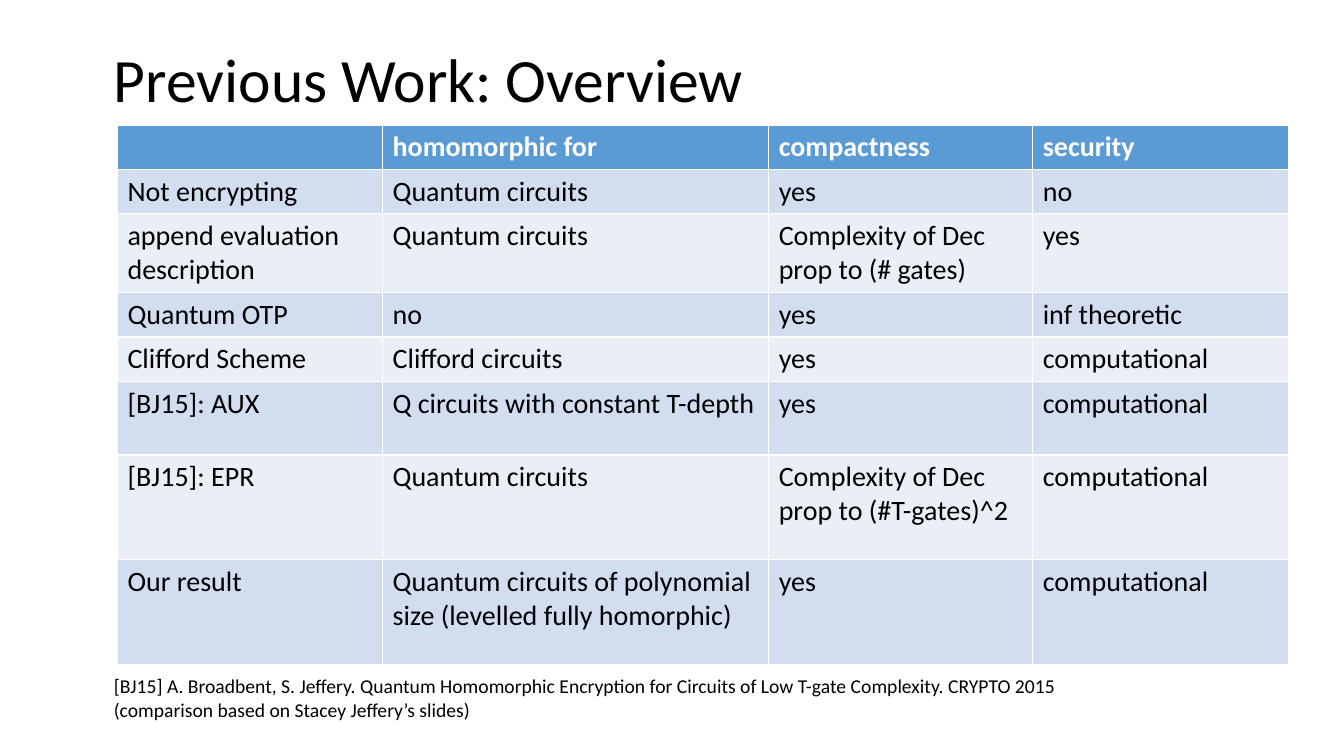
from dataclasses import dataclass

from pptx import Presentation
from pptx.dml.color import RGBColor
from pptx.enum.text import MSO_ANCHOR, MSO_AUTO_SIZE, PP_ALIGN
from pptx.util import Pt


@dataclass(frozen=True)
class Theme:
    """Colours, typeface and type sizes of the slide."""

    font: str = "Calibri"
    ink: str = "000000"
    paper: str = "FFFFFF"
    header: str = "5B9BD5"
    bands: tuple = ("D2DEEF", "EAEFF7")
    title_size: float = 44
    table_size: float = 20
    source_size: float = 14


THEME = Theme()
TITLE = "Previous Work: Overview"
COLUMN_WIDTHS = (189.4, 275.8, 188.6, 182.9)
ROW_HEIGHTS = (31.7, 31.7, 55.4, 31.7, 31.7, 52.6, 74.9, 74.9)
SCHEMES = (
    ("", "homomorphic for", "compactness", "security"),
    ("Not encrypting", "Quantum circuits", "yes", "no"),
    ("append evaluation description", "Quantum circuits",
     "Complexity of Dec \vprop to (# gates)", "yes"),
    ("Quantum OTP", "no", "yes", "inf theoretic"),
    ("Clifford Scheme", "Clifford circuits", "yes", "computational"),
    ("[BJ15]: AUX", "Q circuits with constant T-depth", "yes", "computational"),
    ("[BJ15]: EPR", "Quantum circuits",
     "Complexity of Dec prop to (#T-gates)^2", "computational"),
    ("Our result", "Quantum circuits of polynomial size (levelled fully homorphic)",
     "yes", "computational"),
)
SOURCES = (
    "[BJ15] A. Broadbent, S. Jeffery. Quantum Homomorphic Encryption for "
    "Circuits of Low T-gate Complexity. CRYPTO 2015\n"
    "(comparison based on Stacey Jeffery’s slides)"
)


def format_text(text_frame, size, color, bold=False):
    """Apply the theme typeface with a size, colour and weight to all runs."""
    for paragraph in text_frame.paragraphs:
        for run in paragraph.runs:
            run.font.name = THEME.font
            run.font.size = Pt(size)
            run.font.bold = bold
            run.font.color.rgb = RGBColor.from_string(color)


def place_title(slide, left, top, width, height):
    """Move the title placeholder into its box and format it."""
    title = slide.shapes.title
    title.left, title.top = Pt(left), Pt(top)
    title.width, title.height = Pt(width), Pt(height)
    text_frame = title.text_frame
    text_frame.text = TITLE
    text_frame.auto_size = MSO_AUTO_SIZE.NONE
    text_frame.vertical_anchor = MSO_ANCHOR.MIDDLE
    text_frame.paragraphs[0].alignment = PP_ALIGN.LEFT
    text_frame.paragraphs[0].line_spacing = 0.9
    format_text(text_frame, THEME.title_size, THEME.ink)


def add_scheme_table(slide, left, top):
    """Add the comparison table with a header and alternating row fills."""
    table = slide.shapes.add_table(
        len(SCHEMES), len(COLUMN_WIDTHS), Pt(left), Pt(top),
        Pt(sum(COLUMN_WIDTHS)), Pt(sum(ROW_HEIGHTS)),
    ).table
    for column, width in zip(table.columns, COLUMN_WIDTHS):
        column.width = Pt(width)
    for row_index, (row, height) in enumerate(zip(table.rows, ROW_HEIGHTS)):
        row.height = Pt(height)
        is_header = row_index == 0
        fill = THEME.header if is_header else THEME.bands[(row_index - 1) % 2]
        color = THEME.paper if is_header else THEME.ink
        for cell, text in zip(row.cells, SCHEMES[row_index]):
            cell.fill.solid()
            cell.fill.fore_color.rgb = RGBColor.from_string(fill)
            cell.text_frame.text = text
            format_text(cell.text_frame, THEME.table_size, color, is_header)


def add_sources(slide, left, top, width, height):
    """Add the reference lines below the table."""
    box = slide.shapes.add_textbox(Pt(left), Pt(top), Pt(width), Pt(height))
    text_frame = box.text_frame
    text_frame.text = SOURCES
    text_frame.word_wrap = False
    text_frame.auto_size = MSO_AUTO_SIZE.SHAPE_TO_FIT_TEXT
    format_text(text_frame, THEME.source_size, THEME.ink)


def main():
    """Build the overview slide and save it."""
    presentation = Presentation()
    presentation.slide_width, presentation.slide_height = Pt(960), Pt(540)
    slide = presentation.slides.add_slide(presentation.slide_layouts[5])
    place_title(slide, 74.2, 14.4, 828, 89.3)
    add_scheme_table(slide, 83.9, 89.3)
    add_sources(slide, 74.2, 478.1, 693.4, 41)
    presentation.save("out.pptx")


if __name__ == "__main__":
    main()
